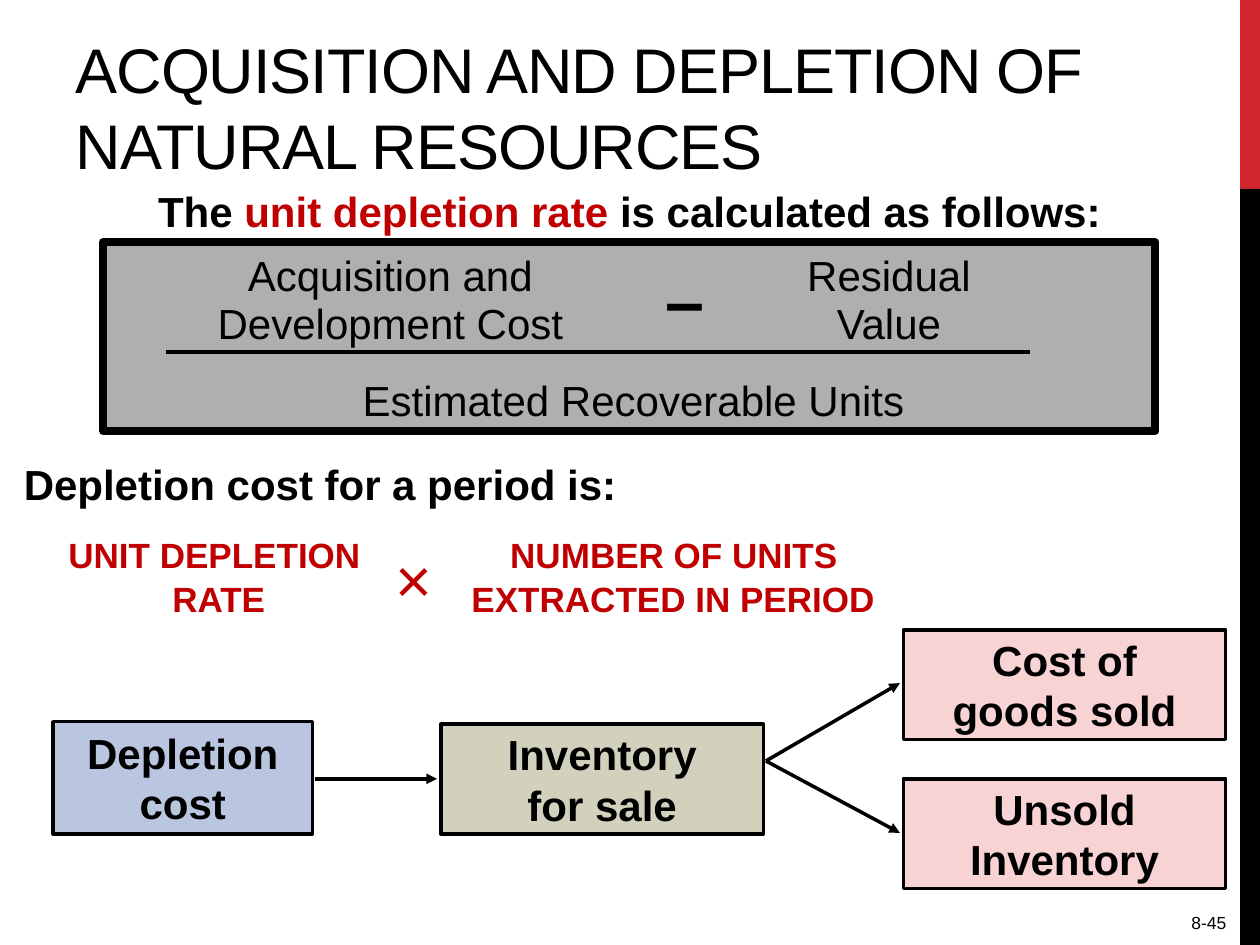
from lxml import etree
from pptx import Presentation
from pptx.dml.color import RGBColor
from pptx.enum.shapes import MSO_CONNECTOR, MSO_SHAPE
from pptx.enum.text import MSO_ANCHOR, MSO_AUTO_SIZE, PP_ALIGN
from pptx.oxml.ns import qn
from pptx.util import Cm, Pt

LEFT, CENTER, RIGHT = PP_ALIGN.LEFT, PP_ALIGN.CENTER, PP_ALIGN.RIGHT
MIDDLE, BOTTOM = MSO_ANCHOR.MIDDLE, MSO_ANCHOR.BOTTOM
RECTANGLE, STRAIGHT = MSO_SHAPE.RECTANGLE, MSO_CONNECTOR.STRAIGHT
NO_FIT = MSO_AUTO_SIZE.NONE

FONT = "Arial"
BLACK = RGBColor(0x00, 0x00, 0x00)
BRIGHT_RED = RGBColor(0xD1, 0x28, 0x2E)
DEEP_RED = RGBColor(0xC0, 0x00, 0x00)
GRAY = RGBColor(0xAF, 0xAF, 0xAF)
BLUE = RGBColor(0xBA, 0xC5, 0xDF)
OLIVE = RGBColor(0xD2, 0xD1, 0xBE)
PINK = RGBColor(0xF7, 0xD3, 0xD4)


def style(para, size, bold=False, color=BLACK, align=CENTER):
    para.alignment = align
    font = para.font
    font.name, font.size, font.bold = FONT, Pt(size), bold
    font.color.rgb = color


def add_text(page, box, text, size, bold=False, color=BLACK, align=CENTER,
             spacing=None):
    frame = page.shapes.add_textbox(*map(Cm, box)).text_frame
    frame.word_wrap = True
    frame.text = text
    for para in frame.paragraphs:
        style(para, size, bold, color, align)
        if spacing:
            para.line_spacing = spacing
    return frame


def add_box(page, box, fill, border=0, text=""):
    shape = page.shapes.add_shape(RECTANGLE, *map(Cm, box))
    shape.shadow.inherit = False
    shape.fill.solid()
    shape.fill.fore_color.rgb = fill
    if border:
        shape.line.color.rgb = BLACK
        shape.line.width = Pt(border)
    else:
        shape.line.fill.background()
    if text:
        frame = shape.text_frame
        frame.text = text
        frame.vertical_anchor = MIDDLE
        for para in frame.paragraphs:
            style(para, 24, bold=True)


def add_line(page, start, end, width, arrow=False):
    line = page.shapes.add_connector(STRAIGHT, *map(Cm, start + end))
    line.line.color.rgb = BLACK
    line.line.width = Pt(width)
    properties = line._element.spPr
    if arrow:
        etree.SubElement(properties.find(qn("a:ln")), qn("a:tailEnd"),
                         type="triangle")
    etree.SubElement(properties, qn("a:effectLst"))


def draw_sidebar(page, left, top, width, height):
    red_height = height / 5
    add_box(page, (left, top, width, red_height), BRIGHT_RED)
    add_box(page, (left, top + red_height, width, height - red_height), BLACK)


def draw_title(page, left, top, width, height):
    title = page.shapes.title
    title.left, title.top, title.width, title.height = map(
        Cm, (left, top, width, height))
    frame = title.text_frame
    frame.text = "ACQUISITION AND DEPLETION OF NATURAL RESOURCES"
    frame.auto_size = NO_FIT
    frame.vertical_anchor = BOTTOM
    para = frame.paragraphs[0]
    style(para, 36, align=LEFT)
    para.runs[0]._r.get_or_add_rPr().set("spc", "-60")


def draw_intro(page, left, top, width, height):
    frame = add_text(page, (left, top, width, height), "The ", 24, bold=True)
    para = frame.paragraphs[0]
    term = para.add_run()
    term.text = "unit depletion rate "
    term.font.color.rgb = DEEP_RED
    para.add_run().text = "is calculated as follows:"


def draw_rate_formula(page, left, top, width, height):
    add_box(page, (left, top, width, height), GRAY, 4.5)
    bar_y = top + 2.21
    add_line(page, (left + 1.27, bar_y), (left + 18.69, bar_y), 2.25)
    add_text(page, (left + 1.37, top + 2.74, 18.64, 1.07),
             "Estimated Recoverable Units", 24, spacing=0.8)
    add_text(page, (left + 1.09, top + 0.1, 9.4, 2.18),
             "Acquisition and\nDevelopment Cost", 24, spacing=0.95)
    add_text(page, (left + 12.84, top + 0.1, 6, 2.18),
             "Residual\nValue", 24, spacing=0.95)
    add_text(page, (left + 11.08, top + 0.17, 1.68, 1.93), "–", 40,
             bold=True, align=LEFT)


def draw_cost_formula(page, left, top, width, height):
    add_text(page, (left, top, width, 1.47), "Depletion cost for a period is:",
             24, bold=True, align=LEFT)
    upper, lower = 1.52, 2.39
    for x, y, line_width, text in (
        (0.41, upper, 7.37, "UNIT DEPLETION"),
        (1.17, lower, 6.02, "RATE"),
        (9.09, upper, 8.53, "NUMBER OF UNITS"),
        (8.3, lower, 10.08, "EXTRACTED IN PERIOD"),
    ):
        add_text(page, (left + x, top + y, line_width, height - lower), text,
                 20, bold=True, color=DEEP_RED)
    add_text(page, (left + 7.49, top + 1.65, 1.57, 1.8), "×", 36,
             color=DEEP_RED, align=LEFT)


def draw_cost_flow(page, left, top, width, height):
    box_width, box_height = 6.5, 2.21
    outcome_x = width - box_width
    for x, y, w, h, fill, text in (
        (0, 1.85, 5.23, 2.26, BLUE, "Depletion\ncost"),
        (7.82, 1.9, box_width, box_height, OLIVE, "Inventory\nfor sale"),
        (outcome_x, 0, box_width, box_height, PINK, "Cost of\ngoods sold"),
        (outcome_x, height - box_height, box_width, box_height, PINK,
         "Unsold\nInventory"),
    ):
        add_box(page, (left + x, top + y, w, h), fill, 2, text)
    for start_x, start_y, end_x, end_y in (
        (5.28, 3, 7.74, 3),
        (14.37, 2.64, 17.07, 1.07),
        (14.37, 2.64, 17.07, 4.09),
    ):
        add_line(page, (left + start_x, top + start_y),
                 (left + end_x, top + end_y), 2, arrow=True)


def main():
    deck = Presentation()
    deck.slide_width, deck.slide_height = Cm(25.4), Cm(19.05)
    page = deck.slides.add_slide(deck.slide_layouts[5])
    draw_sidebar(page, 25, 0, 0.4, 19.05)
    draw_title(page, 1.27, -0.02, 23.3, 3.81)
    draw_intro(page, 1.35, 3.61, 22.68, 1.27)
    draw_rate_formula(page, 2.08, 4.88, 21.21, 3.81)
    draw_cost_formula(page, 0.23, 9.12, 18.4, 3.48)
    draw_cost_flow(page, 1.07, 12.7, 23.64, 5.21)
    add_text(page, (20.32, 18.26, 4.65, 0.79), "8-45", 10, align=RIGHT)
    deck.save("out.pptx")


if __name__ == "__main__":
    main()
